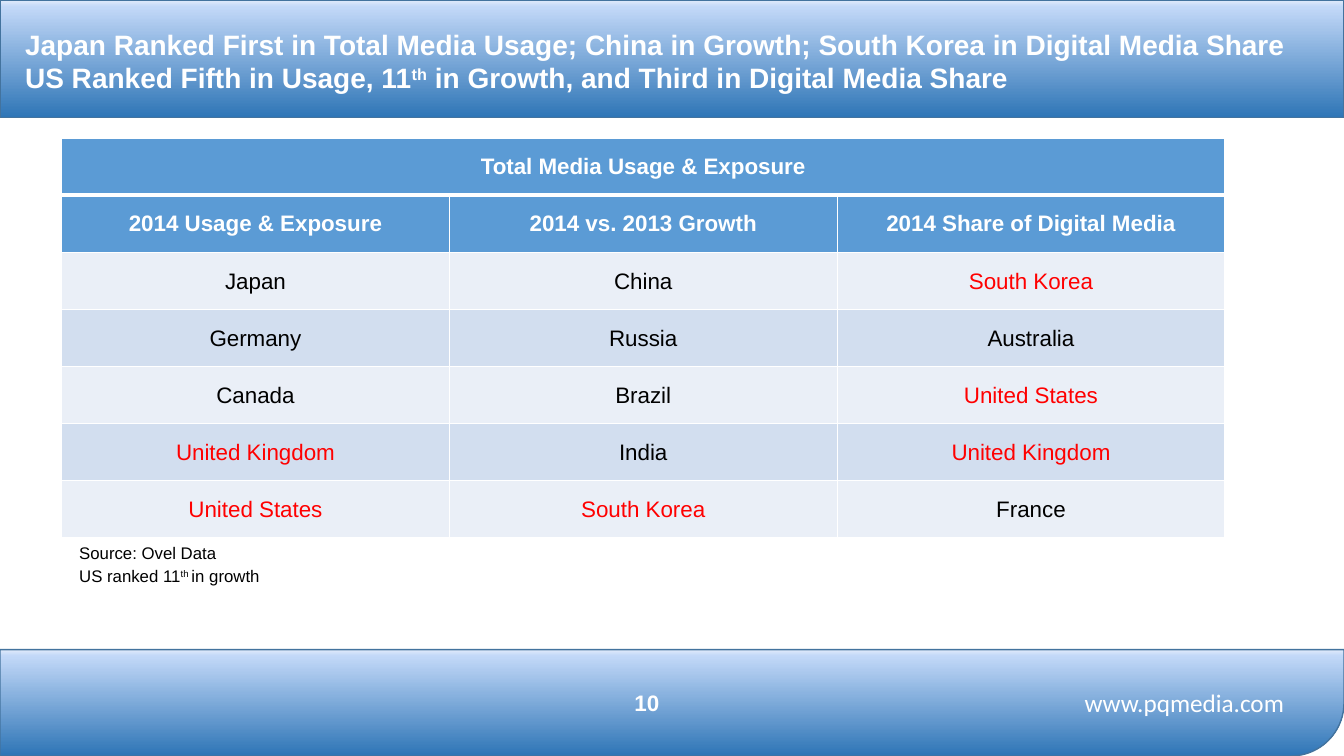
from copy import deepcopy

from lxml import etree
from pptx import Presentation
from pptx.dml.color import RGBColor
from pptx.enum.shapes import MSO_SHAPE
from pptx.enum.text import MSO_ANCHOR, MSO_AUTO_SIZE, PP_ALIGN
from pptx.oxml.ns import qn
from pptx.util import Pt

BAND = MSO_SHAPE.ROUND_1_RECTANGLE
MIDDLE, TOP = MSO_ANCHOR.MIDDLE, MSO_ANCHOR.TOP
CENTER, LEFT = PP_ALIGN.CENTER, PP_ALIGN.LEFT
GROW = MSO_AUTO_SIZE.SHAPE_TO_FIT_TEXT

# Each line is a list of parts; every second part is raised.
TITLE = [
    ["Japan Ranked First in Total Media Usage; China in Growth; "
     "South Korea in Digital Media Share"],
    ["US Ranked Fifth in Usage, 11", "th",
     " in Growth, and Third in Digital Media Share"],
]
NOTES = [["Source: Ovel Data"], ["US ranked 11", "th ", "in growth"]]
NOTE_WIDTHS = [113, 147]
PAGE = [["10"]]
SITE = [["www.pqmedia.com"]]

HEADING = "Total Media Usage & Exposure"
COLUMNS = {
    "2014 Usage & Exposure":
        ["Japan", "Germany", "Canada", "United Kingdom", "United States"],
    "2014 vs. 2013 Growth":
        ["China", "Russia", "Brazil", "India", "South Korea"],
    "2014 Share of Digital Media":
        ["South Korea", "Australia", "United States", "United Kingdom",
         "France"],
}
MARKED = {"South Korea", "United States", "United Kingdom"}

THEME = {
    "white": "FFFFFF", "black": "000000", "mark": "FF0000",
    "head": "5B9BD5", "rows": ["EAEFF7", "D2DEEF"], "edge": "43739E",
    "fade": [(0, "2E75B6"), (0.94, "C2D8F8"), (1, "E1EBFB")],
    "font": "Arial", "site font": "Calibri",
    "title": 20, "site": 18, "body": 16, "note": 12,
}
WIDTH, HEIGHT = 960, 540
COL_WIDTH, ROW_HEIGHT = 277, 40.75


def color(name):
    return RGBColor.from_string(THEME.get(name, name))


def style(font, size, ink, bold=False, face="font"):
    font.size, font.bold, font.name = Pt(THEME[size]), bold, THEME[face]
    font.color.rgb = color(ink)


def add_band(slide, top, height, corner):
    """Draw a full-width bar, dark at its foot, rounded at lower right."""
    band = slide.shapes.add_shape(BAND, 0, Pt(top), Pt(WIDTH), Pt(height))
    band.adjustments[0] = corner
    band.shadow.inherit = False
    props = band._element.spPr
    props.xfrm.set("flipV", "1")
    band.fill.gradient()
    band.fill.gradient_angle = 270
    stops = props.find(".//" + qn("a:gsLst"))
    stops.append(deepcopy(stops[0]))
    for stop, (place, tint) in zip(band.fill.gradient_stops, THEME["fade"]):
        stop.position, stop.color.rgb = place, color(tint)
    band.line.color.rgb, band.line.width = color("edge"), Pt(1)


def add_text(slide, lines, box, size, ink, bold=False, face="font",
             align=LEFT, anchor=TOP, wrap=True):
    shape = slide.shapes.add_textbox(*map(Pt, box))
    frame = shape.text_frame
    frame.word_wrap, frame.vertical_anchor = wrap, anchor
    if not wrap:
        frame.auto_size = GROW
    for i, parts in enumerate(lines):
        para = frame.add_paragraph() if i else frame.paragraphs[0]
        para.alignment = align
        for j, part in enumerate(parts):
            run = para.add_run()
            run.text = part
            style(run.font, size, ink, bold, face)
            if j % 2:
                run._r.get_or_add_rPr().set("baseline", "30000")


def add_edges(cell, widths):
    """Give a cell white borders; widths run left, right, top, bottom."""
    props = cell._tc.get_or_add_tcPr()
    for side, width in zip("LRTB", widths):
        line = etree.SubElement(props, qn("a:ln" + side), w=str(Pt(width)))
        fill = etree.SubElement(line, qn("a:solidFill"))
        etree.SubElement(fill, qn("a:srgbClr"), val=THEME["white"])


def add_ranks(slide):
    rows = [[HEADING, "", ""], list(COLUMNS), *zip(*COLUMNS.values())]
    count = len(COLUMNS)
    table = slide.shapes.add_table(
        len(rows), count, Pt(44), Pt(98.75),
        Pt(COL_WIDTH * count), Pt(ROW_HEIGHT * len(rows))).table
    for col in table.columns:
        col.width = Pt(COL_WIDTH)
    table.cell(0, 0).merge(table.cell(0, count - 1))
    for r, names in enumerate(rows):
        table.rows[r].height = Pt(ROW_HEIGHT)
        head = r < 2
        for c, name in enumerate(names):
            cell = table.cell(r, c)
            add_edges(cell, (1, 1, 3 if r == 1 else 1, 3 if r == 0 else 1))
            cell.fill.solid()
            cell.fill.fore_color.rgb = color(
                "head" if head else THEME["rows"][r % 2])
            cell.vertical_anchor = MIDDLE
            if not head:
                cell.margin_left = cell.margin_right = Pt(0.75)
                cell.margin_top, cell.margin_bottom = Pt(0.75), 0
            cell.text_frame.text = name
            para = cell.text_frame.paragraphs[0]
            para.alignment = CENTER
            ink = "white" if head else "mark" if name in MARKED else "black"
            for run in para.runs:
                style(run.font, "body", ink, head)


def main():
    deck = Presentation()
    deck.slide_width, deck.slide_height = Pt(WIDTH), Pt(HEIGHT)
    slide = deck.slides.add_slide(deck.slide_layouts[6])
    add_band(slide, 464, 76, 0.5)
    add_band(slide, 0, 84, 0)
    add_text(slide, PAGE, (378, 487, 168, 29), "body", "white", True,
             align=CENTER, anchor=MIDDLE)
    add_text(slide, SITE, (732, 487, 228, 29), "site", "white",
             face="site font", align=CENTER, anchor=MIDDLE)
    add_ranks(slide)
    add_text(slide, TITLE, (10.8, 16, 935, 48), "title", "white", True)
    for i, (note, width) in enumerate(zip(NOTES, NOTE_WIDTHS)):
        add_text(slide, [note], (49.5, 384 + 16.5 * i, width, 21.8),
                 "note", "black", wrap=False)
    deck.save("out.pptx")


if __name__ == "__main__":
    main()
